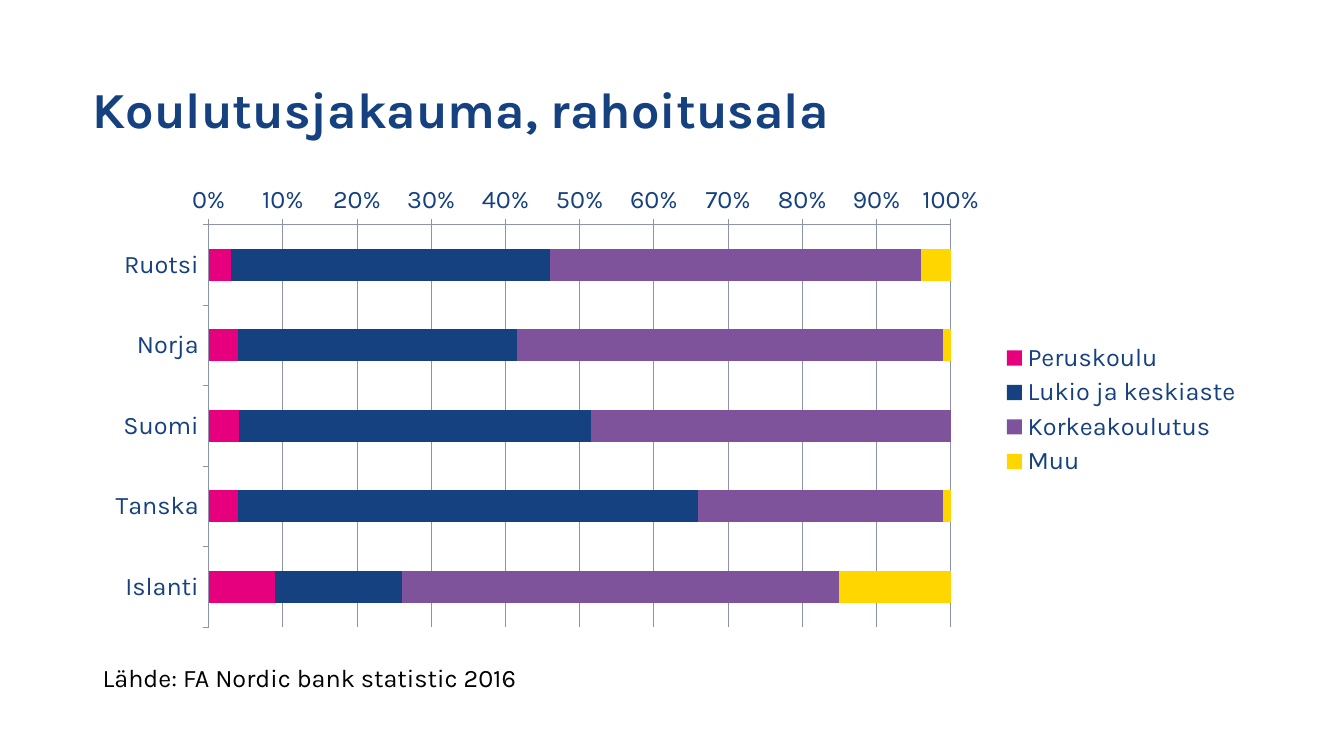
from dataclasses import dataclass

from lxml import etree
from pptx import Presentation
from pptx.chart.data import CategoryChartData
from pptx.dml.color import RGBColor
from pptx.enum.chart import XL_CHART_TYPE, XL_LEGEND_POSITION, XL_TICK_MARK
from pptx.enum.text import MSO_ANCHOR
from pptx.oxml.ns import qn
from pptx.util import Inches, Pt

STACKED_BAR = XL_CHART_TYPE.BAR_STACKED_100
LEGEND_RIGHT = XL_LEGEND_POSITION.RIGHT
TICK_OUTSIDE, TICK_NONE = XL_TICK_MARK.OUTSIDE, XL_TICK_MARK.NONE
MIDDLE, TOP = MSO_ANCHOR.MIDDLE, MSO_ANCHOR.TOP

PAGE_WIDTH, PAGE_HEIGHT = Inches(13.33), Inches(7.5)


@dataclass(frozen=True)
class Theme:
    font: str = "Karla"
    title_size: int = 36
    body_size: int = 18
    navy: str = "164180"
    black: str = "000000"
    grid: str = "8B93AF"


THEME = Theme()

COUNTRIES = ("Ruotsi", "Norja", "Suomi", "Tanska", "Islanti")
EDUCATION_LEVELS = (
    ("Peruskoulu", (3, 4, 4, 4, 9), "E6007E"),
    ("Lukio ja keskiaste", (43, 38, 47, 62, 17), THEME.navy),
    ("Korkeakoulutus", (50, 58, 48, 33, 59), "7F539C"),
    ("Muu", (4, 1, 0, 1, 15), "FFD600"),
)

# Left, top, width and height as percentages of the page
TITLE_AREA = (6.15, 5.2, 86.27, 19.33)
CHART_AREA = (6.9, 23.6, 86.27, 61.2)
SOURCE_AREA = (6.9, 86.93, 46.59, 5.33)
# The same as shares of the chart
PLOT_AREA = {"x": 0.1, "y": 0.1, "w": 0.64, "h": 0.87}


def place(area):
    """Turn percentages of the page into lengths."""
    sides = (PAGE_WIDTH, PAGE_HEIGHT) * 2
    return [int(side * share / 100) for side, share in zip(sides, area)]


def set_format(target, values):
    for name, value in values.items():
        setattr(target, name, value)


def style_font(font, size, color, bold=False):
    set_format(font, {"name": THEME.font, "size": Pt(size), "bold": bold})
    font.color.rgb = RGBColor.from_string(color)


def add_text(page, text, area, size, color, bold=False, anchor=TOP, spacing=None):
    box = page.shapes.add_textbox(*place(area))
    set_format(box.text_frame, {"word_wrap": True, "vertical_anchor": anchor})
    para = box.text_frame.paragraphs[0]
    para.line_spacing = spacing
    span = para.add_run()
    span.text = text
    style_font(span.font, size, color, bold)


def style_line(line):
    line.color.rgb = RGBColor.from_string(THEME.grid)
    line.width = Pt(0.75)


def fix_plot_area(chart):
    """Give the inner plot area a fixed place within the chart."""
    plot_area = chart.plots[0]._element.getparent()
    for old_layout in plot_area.findall(qn("c:layout")):
        plot_area.remove(old_layout)
    layout = etree.Element(qn("c:layout"))
    manual = etree.SubElement(layout, qn("c:manualLayout"))
    settings = {"layoutTarget": "inner", "xMode": "edge", "yMode": "edge", **PLOT_AREA}
    for name, value in settings.items():
        etree.SubElement(manual, qn(f"c:{name}")).set("val", str(value))
    plot_area.insert(0, layout)


def style_axes(chart):
    for axis in (chart.category_axis, chart.value_axis):
        set_format(axis, {"major_tick_mark": TICK_OUTSIDE, "minor_tick_mark": TICK_NONE})
        style_line(axis.format.line)
    chart.category_axis.reverse_order = True
    chart.category_axis.has_major_gridlines = False
    set_format(chart.value_axis, {
        "has_major_gridlines": True,
        "minimum_scale": 0,
        "maximum_scale": 1,
        "major_unit": 0.1,
    })
    style_line(chart.value_axis.major_gridlines.format.line)
    set_format(chart.value_axis.tick_labels,
               {"number_format": "0%", "number_format_is_linked": False})


def add_education_chart(page):
    chart_data = CategoryChartData()
    chart_data.categories = COUNTRIES
    for name, values, _ in EDUCATION_LEVELS:
        chart_data.add_series(name, values)
    chart = page.shapes.add_chart(STACKED_BAR, *place(CHART_AREA), chart_data).chart
    set_format(chart, {"has_title": False, "has_legend": True})
    style_font(chart.font, THEME.body_size, THEME.navy)
    set_format(chart.legend, {"position": LEGEND_RIGHT, "include_in_layout": False})
    plot = chart.plots[0]
    set_format(plot, {"gap_width": 150, "overlap": 100, "vary_by_categories": False})
    for series, (_, _, color) in zip(plot.series, EDUCATION_LEVELS):
        series.format.fill.solid()
        series.format.fill.fore_color.rgb = RGBColor.from_string(color)
    style_axes(chart)
    fix_plot_area(chart)


def main():
    deck = Presentation()
    set_format(deck, {"slide_width": PAGE_WIDTH, "slide_height": PAGE_HEIGHT})
    page = deck.slides.add_slide(deck.slide_layouts[6])
    add_text(page, "Koulutusjakauma, rahoitusala", TITLE_AREA, THEME.title_size,
             THEME.navy, bold=True, anchor=MIDDLE, spacing=0.9)
    add_education_chart(page)
    add_text(page, "Lähde: FA Nordic bank statistic 2016", SOURCE_AREA,
             THEME.body_size, THEME.black)
    deck.save("out.pptx")


if __name__ == "__main__":
    main()
